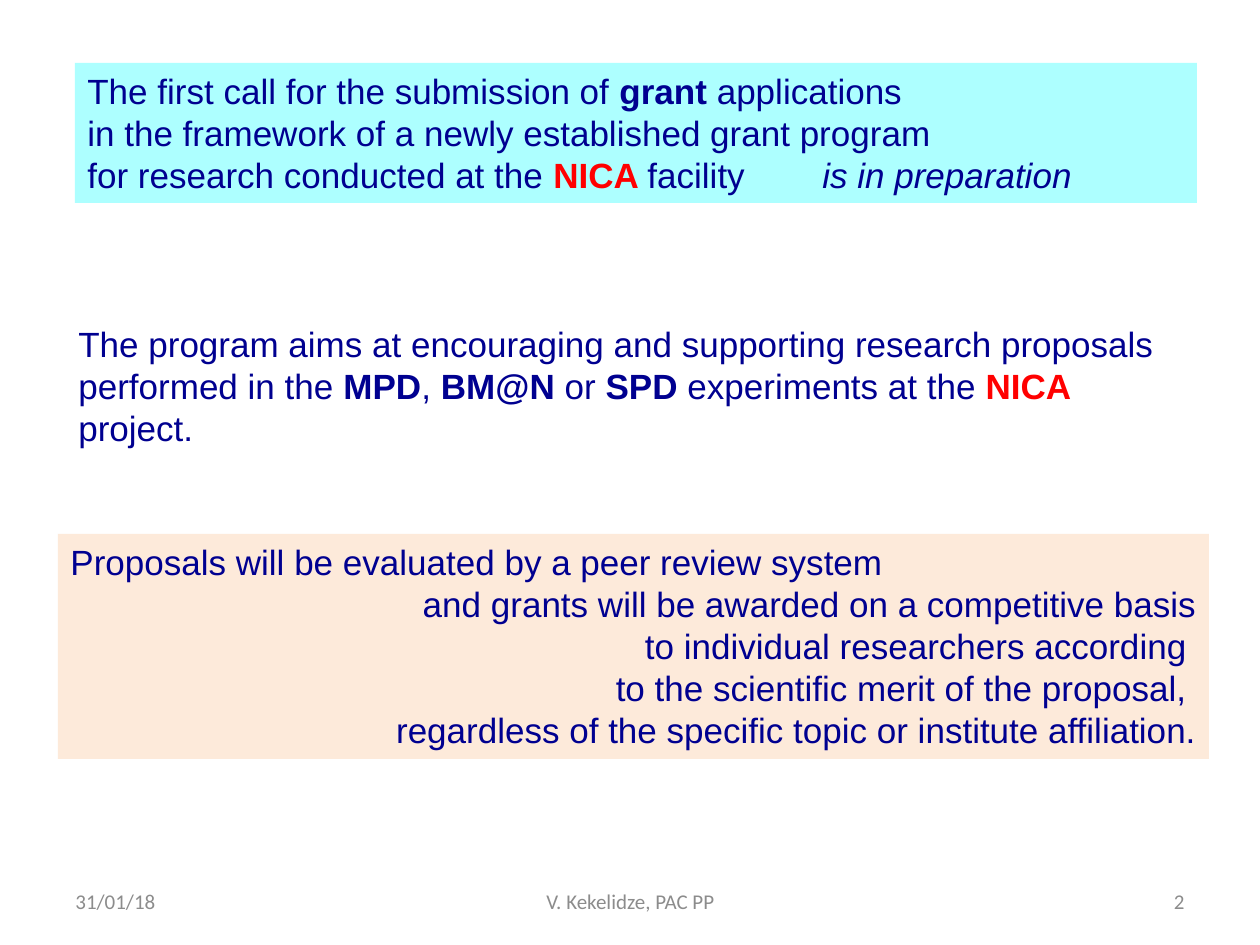
from pptx import Presentation
from pptx.dml.color import RGBColor
from pptx.enum.shapes import MSO_SHAPE
from pptx.enum.text import MSO_ANCHOR, PP_ALIGN
from pptx.oxml.ns import qn
from pptx.util import Pt
from lxml import etree

LEFT, MID, RIGHT = PP_ALIGN.LEFT, PP_ALIGN.CENTER, PP_ALIGN.RIGHT
RECT = MSO_SHAPE.RECTANGLE
MIDDLE = MSO_ANCHOR.MIDDLE
SCALE = 914400 / 126
NAVY, RED, GREY = "000090", "FF0000", "8C8C8C"
TAB = 735  # start of the status words, from the text edge

# Content: a line is (alignment, runs); a run is (text, style)
# Styles: "b" bold, "i" italic, "r" bold red
AIMS = [
    (LEFT, [("The program aims at encouraging and supporting research proposals "
             "performed in the ", ""), ("MPD", "b"), (", ", ""),
            ("BM@N ", "b"), ("or ", ""), ("SPD ", "b"),
            ("experiments at the ", ""), ("NICA ", "r"), ("project.", "")]),
]
CALL = [
    (LEFT, [("The first call for the submission of ", ""), ("grant", "b"),
            (" applications", "")]),
    (LEFT, [("in the framework of a newly established grant program", "")]),
    (LEFT, [("for research conducted at the ", ""), ("NICA ", "r"),
            ("facility\t", ""), ("is in preparation", "i")]),
]
REVIEW = [
    (LEFT, [("Proposals will be evaluated by a peer review system", "")]),
    (RIGHT, [("and grants will be awarded on a competitive basis", "")]),
    (RIGHT, [("to individual researchers according ", "")]),
    (RIGHT, [("to the scientific merit of the proposal, ", "")]),
    (RIGHT, [("regardless of the specific topic or institute affiliation.", "")]),
]
# (left, top, width, height), fill, lines
BLOCKS = [
    ((66, 316, 1131, 140), None, AIMS),
    ((75, 63, 1122, 140), "ADFFFF", CALL),
    ((58, 534, 1151, 225), "FDEADA", REVIEW),
]
# left, width, alignment, text
FOOT = [
    (63, 294, LEFT, "31/01/18"),
    (431, 399, MID, "V. Kekelidze, PAC PP"),
    (903, 294, RIGHT, "2"),
]
FOOT_TOP, FOOT_HIGH = 876, 50


def px(n):
    return round(n * SCALE)


def color(code):
    return RGBColor.from_string(code)


def style(font, name, size, code):
    font.name, font.size = name, Pt(size)
    font.color.rgb = color(code)


def add_box(slide, area, fill=None):
    area = [px(n) for n in area]
    if fill:
        box = slide.shapes.add_shape(RECT, *area)
        box.shadow.inherit = False
        box.fill.solid()
        box.fill.fore_color.rgb = color(fill)
        box.line.fill.background()
    else:
        box = slide.shapes.add_textbox(*area)
    box.text_frame.word_wrap = True
    return box.text_frame


def add_tab(para, pos):
    tabs = etree.SubElement(para._p.get_or_add_pPr(), qn("a:tabLst"))
    etree.SubElement(tabs, qn("a:tab"), pos=str(px(pos)), algn="l")


def add_lines(frame, lines):
    frame.vertical_anchor = MSO_ANCHOR.TOP
    for i, (align, runs) in enumerate(lines):
        para = frame.paragraphs[0] if i == 0 else frame.add_paragraph()
        para.alignment = align
        if any("\t" in text for text, _ in runs):
            add_tab(para, TAB)
        for text, mark in runs:
            run = para.add_run()
            run.text = text
            style(run.font, "Arial", 20, RED if mark == "r" else NAVY)
            run.font.bold = mark in ("b", "r")
            run.font.italic = mark == "i"


def main():
    deck = Presentation()
    deck.slide_width, deck.slide_height = px(1260), px(945)
    slide = deck.slides.add_slide(deck.slide_layouts[6])

    # Text blocks
    for area, fill, lines in BLOCKS:
        add_lines(add_box(slide, area, fill), lines)

    # Footer
    for left, width, align, text in FOOT:
        frame = add_box(slide, (left, FOOT_TOP, width, FOOT_HIGH))
        frame.vertical_anchor = MIDDLE
        frame.text = text
        para = frame.paragraphs[0]
        para.alignment = align
        style(para.runs[0].font, "Calibri", 12, GREY)

    deck.save("out.pptx")


if __name__ == "__main__":
    main()
